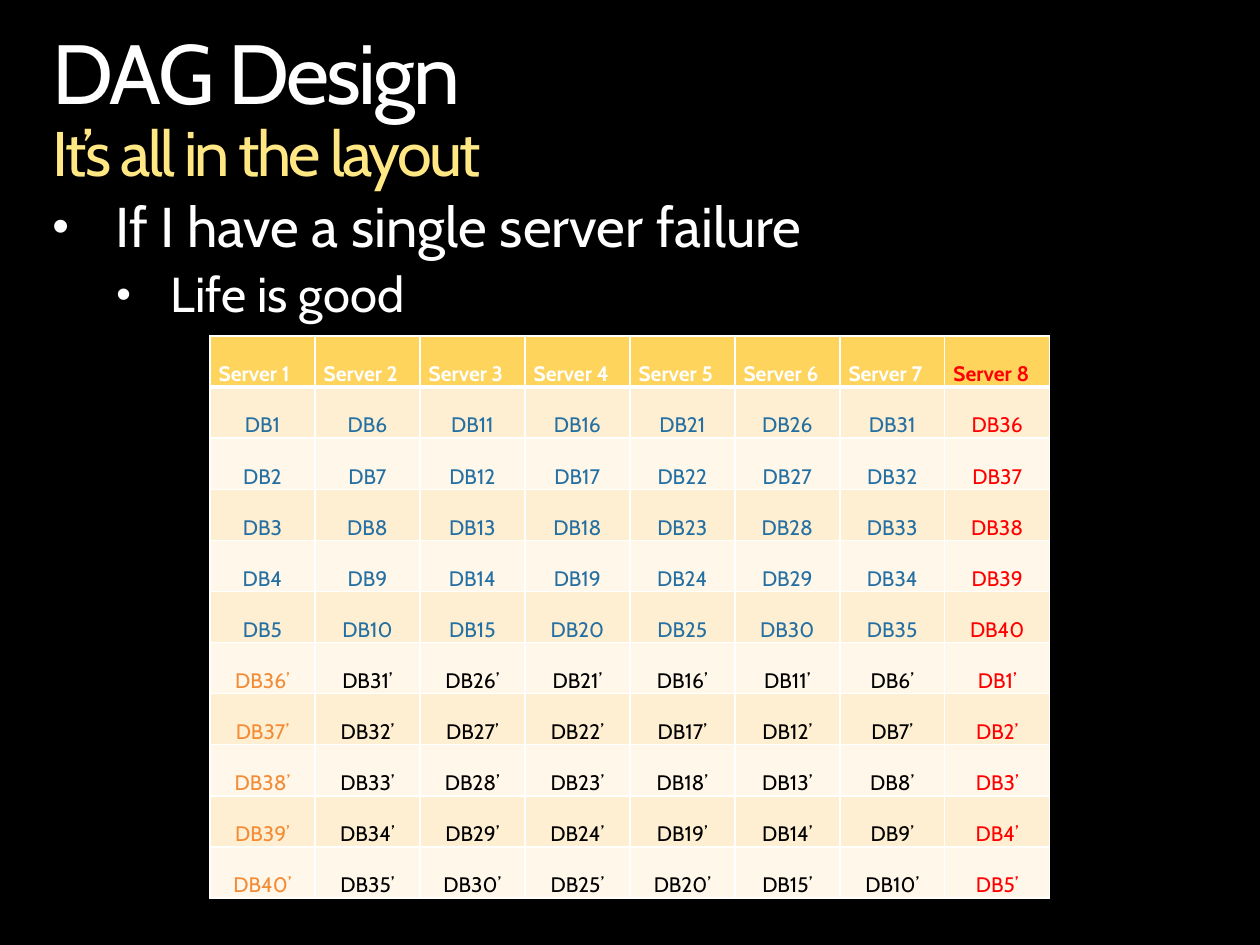
from lxml import etree
from pptx import Presentation
from pptx.dml.color import RGBColor
from pptx.enum import text
from pptx.oxml import ns
from pptx.util import Pt

BLACK = RGBColor(0x00, 0x00, 0x00)
WHITE = RGBColor(0xFF, 0xFF, 0xFF)
YELLOW = RGBColor(0xFF, 0xE7, 0x84)
RED = RGBColor(0xFF, 0x00, 0x00)
BLUE = RGBColor(0x25, 0x70, 0xA3)
ORANGE = RGBColor(0xF3, 0x8C, 0x37)
HEADER_FILL = RGBColor(0xFE, 0xD4, 0x5C)
DARK_BAND = RGBColor(0xFF, 0xEF, 0xD2)
LIGHT_BAND = RGBColor(0xFF, 0xF7, 0xEA)

SERVERS = 8
DATABASES = 5
FRAME_FORMAT = {
    "word_wrap": True,
    "margin_left": 0,
    "margin_right": 0,
    "margin_top": 0,
    "margin_bottom": 0,
}
CELL_FORMAT = {
    "margin_left": Pt(5),
    "margin_right": Pt(5),
    "margin_top": 0,
    "margin_bottom": 0,
    "vertical_anchor": text.MSO_ANCHOR.BOTTOM,
}


def add_run(paragraph, words, size, color, bold=False):
    run = paragraph.add_run()
    run.text = words
    font_format = {"name": "Cabin", "size": Pt(size), "bold": bold}
    for name, value in font_format.items():
        setattr(run.font, name, value)
    run.font.color.rgb = color
    return run


def add_border(cell, side, width):
    properties = cell._tc.get_or_add_tcPr()
    line = etree.SubElement(properties, ns.qn(f"a:ln{side}"), w=str(Pt(width)))
    fill = etree.SubElement(line, ns.qn("a:solidFill"))
    etree.SubElement(fill, ns.qn("a:srgbClr"), val=str(WHITE))


presentation = Presentation()
presentation.slide_width = Pt(720)
presentation.slide_height = Pt(540)
slide = presentation.slides.add_slide(presentation.slide_layouts[6])
slide.background.fill.solid()
slide.background.fill.fore_color.rgb = BLACK

title = slide.shapes.add_textbox(Pt(30), Pt(18), Pt(660), Pt(92)).text_frame
body = slide.shapes.add_textbox(Pt(30), Pt(114), Pt(660), Pt(72)).text_frame
for frame in (title, body):
    for name, value in FRAME_FORMAT.items():
        setattr(frame, name, value)

paragraph = title.paragraphs[0]
paragraph.line_spacing = 0.9
heading = add_run(paragraph, "DAG Design", 48, WHITE)
paragraph.add_line_break()
subheading = add_run(paragraph, "It’s all in the layout", 36, YELLOW)
for run in (heading, subheading):
    run._r.get_or_add_rPr().set("spc", "-150")

bullets = [
    ("If I have a single server failure", 32, 36, 36, 0),
    ("Life is good", 28, 67.5, 31, 6),
]
for level, (words, size, margin, hanging, space) in enumerate(bullets):
    paragraph = body.add_paragraph() if level else body.paragraphs[0]
    paragraph.level = level
    properties = paragraph._p.get_or_add_pPr()
    properties.set("marL", str(Pt(margin)))
    properties.set("indent", str(-Pt(hanging)))
    etree.SubElement(properties, ns.qn("a:buSzPct"), val="85000")
    etree.SubElement(properties, ns.qn("a:buFont"), typeface="Arial")
    etree.SubElement(properties, ns.qn("a:buChar"), char="•")
    paragraph.line_spacing = 0.9
    paragraph.space_before = Pt(space)
    add_run(paragraph, words, size, WHITE)

row_count = 1 + 2 * DATABASES
table = slide.shapes.add_table(
    row_count, SERVERS, Pt(120), Pt(192), Pt(480), Pt(29.2 * row_count)
).table
for column in table.columns:
    column.width = Pt(60)
for row in table.rows:
    row.height = Pt(29.2)

for row in range(row_count):
    for column in range(SERVERS):
        if row == 0:
            words, color, band = f"Server {column + 1}", WHITE, HEADER_FILL
        else:
            band = DARK_BAND if row % 2 else LIGHT_BAND
            if row <= DATABASES:
                words, color = f"DB{DATABASES * column + row}", BLUE
            else:
                mirrored = SERVERS - 1 - column
                words = f"DB{DATABASES * mirrored + row - DATABASES}’"
                color = BLACK if column else ORANGE
        if column == SERVERS - 1:
            color = RED

        cell = table.cell(row, column)
        for name, value in CELL_FORMAT.items():
            setattr(cell, name, value)
        add_border(cell, "L", 1)
        add_border(cell, "R", 1)
        add_border(cell, "T", 3 if row == 1 else 1)
        add_border(cell, "B", 3 if row == 0 else 1)
        cell.fill.solid()
        cell.fill.fore_color.rgb = band
        paragraph = cell.text_frame.paragraphs[0]
        paragraph.alignment = text.PP_ALIGN.CENTER if row else text.PP_ALIGN.LEFT
        add_run(paragraph, words, 12, color, bold=row == 0)

presentation.save("out.pptx")
